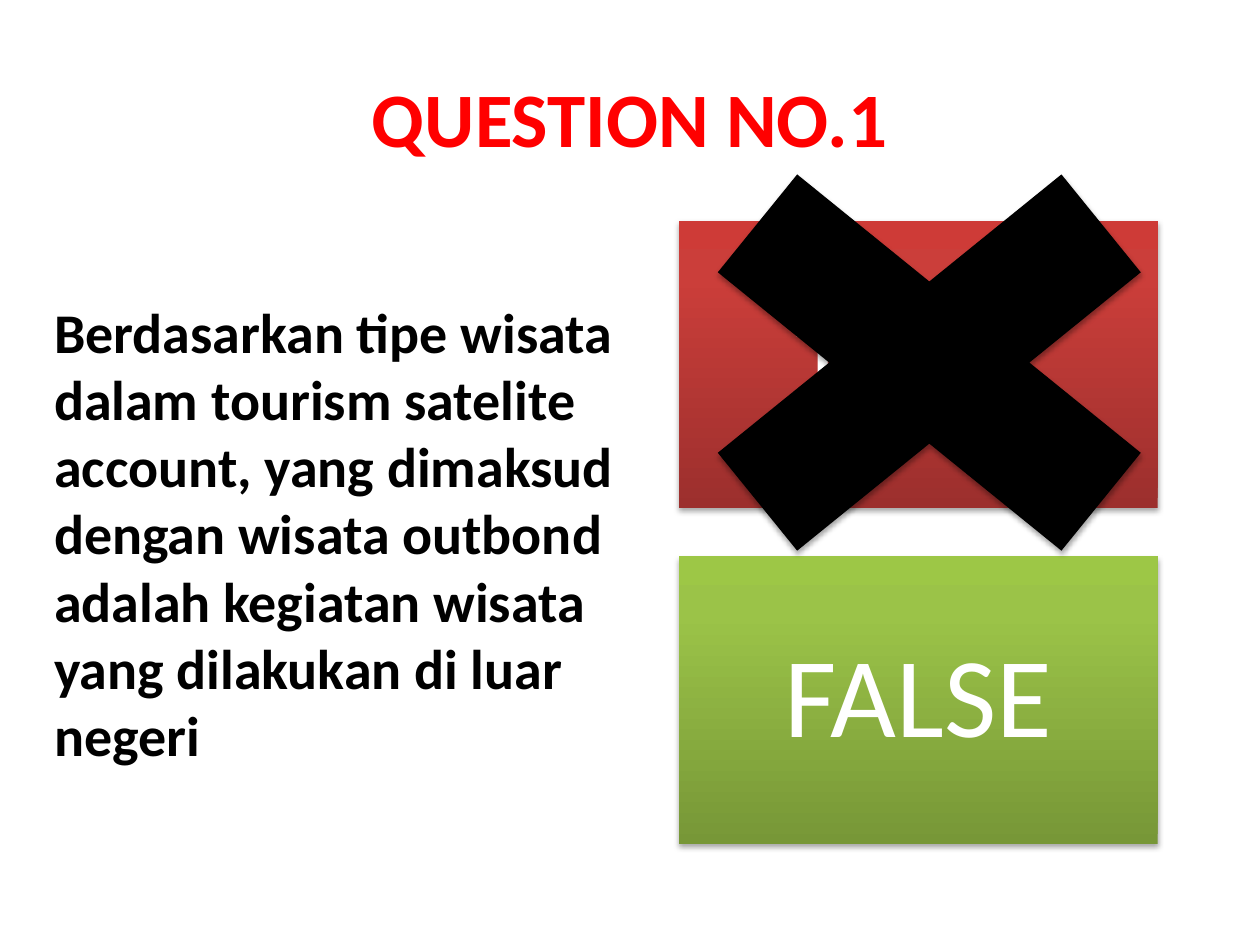
from lxml import etree
from pptx import Presentation
from pptx.dml.color import RGBColor
from pptx.enum.shapes import MSO_SHAPE
from pptx.enum.text import MSO_ANCHOR, PP_ALIGN
from pptx.oxml.ns import qn
from pptx.util import Cm, Pt

RECTANGLE = MSO_SHAPE.RECTANGLE
CROSS = MSO_SHAPE.MATH_MULTIPLY
MIDDLE = MSO_ANCHOR.MIDDLE
LEFT, CENTER = PP_ALIGN.LEFT, PP_ALIGN.CENTER

FONT = "Calibri"
BLACK = RGBColor(0x00, 0x00, 0x00)
WHITE = RGBColor(0xFF, 0xFF, 0xFF)
TITLE_RED = RGBColor(0xFF, 0x00, 0x00)
# Gradient stops run from the bottom of a button to its top
STOP_POSITIONS = (0, 80, 100)
RED_STOPS = (RGBColor(0x9C, 0x2F, 0x2D), RGBColor(0xCB, 0x3E, 0x3A),
             RGBColor(0xCE, 0x3B, 0x37))
GREEN_STOPS = (RGBColor(0x77, 0x97, 0x37), RGBColor(0x9B, 0xC3, 0x48),
               RGBColor(0x9D, 0xC7, 0x46))

QUESTION = ("Berdasarkan tipe wisata dalam tourism satelite account, "
            "yang dimaksud dengan wisata outbond adalah kegiatan wisata "
            "yang dilakukan di luar negeri")


def write_text(text_frame, text, size, color, bold=False, alignment=CENTER):
    text_frame.word_wrap = True
    text_frame.vertical_anchor = MIDDLE
    paragraph = text_frame.paragraphs[0]
    paragraph.alignment = alignment
    run = paragraph.add_run()
    run.text = text
    run.font.name = FONT
    run.font.size = Pt(size)
    run.font.bold = bold
    run.font.color.rgb = color
    return paragraph


def add_color(parent, color):
    return etree.SubElement(parent, qn("a:srgbClr"), val=str(color))


def add_shadow(shape):
    """Give the shape a soft black shadow that falls straight down."""
    shape.shadow.inherit = False
    effects = shape._element.spPr.find(qn("a:effectLst"))
    shadow = etree.SubElement(
        effects, qn("a:outerShdw"), blurRad=str(Pt(3.1)), dist=str(Pt(1.8)),
        dir="5400000", rotWithShape="0")
    etree.SubElement(add_color(shadow, BLACK), qn("a:alpha"), val="35000")


def fill_gradient(shape, colors):
    shape.fill.gradient()
    shape.fill.gradient_angle = 90
    stops = shape._element.spPr.find(qn("a:gradFill")).find(qn("a:gsLst"))
    for stop in list(stops):
        stops.remove(stop)
    for position, color in zip(STOP_POSITIONS, colors):
        stop = etree.SubElement(stops, qn("a:gs"), pos=str(position * 1000))
        add_color(stop, color)


def place_title(slide, left, top, width, height):
    title = slide.shapes.title
    title.left, title.top, title.width, title.height = left, top, width, height
    write_text(title.text_frame, "QUESTION NO.1", 44, TITLE_RED, bold=True)


def add_question(slide, left, top, width, height):
    box = slide.shapes.add_textbox(left, top, width, height)
    paragraph = write_text(box.text_frame, QUESTION, 32, BLACK, bold=True,
                           alignment=LEFT)
    paragraph.space_before = Pt(6.4)


def add_answer(slide, text, colors, left, top, width, height):
    button = slide.shapes.add_shape(RECTANGLE, left, top, width, height)
    fill_gradient(button, colors)
    button.line.fill.background()
    add_shadow(button)
    frame = button.text_frame
    frame.margin_left = frame.margin_right = Cm(0.69)
    frame.margin_top = frame.margin_bottom = Cm(0.69)
    write_text(frame, text, 65, WHITE).line_spacing = 0.9


def add_answers(slide, left, top, width, height):
    """Stack the two answers with a gap of a thirteenth of the height."""
    gap = height // 13
    answer_height = (height - gap) // 2
    answers = (("TRUE", RED_STOPS), ("FALSE", GREEN_STOPS))
    for index, (text, colors) in enumerate(answers):
        add_answer(slide, text, colors, left,
                   top + index * (answer_height + gap), width, answer_height)


def add_cross(slide, left, top, width, height):
    cross = slide.shapes.add_shape(CROSS, left, top, width, height)
    cross.fill.solid()
    cross.fill.fore_color.rgb = BLACK
    cross.line.fill.background()
    add_shadow(cross)


def main():
    presentation = Presentation()
    presentation.slide_width, presentation.slide_height = Cm(25.4), Cm(19.05)
    slide = presentation.slides.add_slide(presentation.slide_layouts[5])
    place_title(slide, Cm(1.27), Cm(0.76), Cm(22.86), Cm(3.18))
    add_question(slide, Cm(0.84), Cm(4.45), Cm(12.27), Cm(12.57))
    add_answers(slide, Cm(13.69), Cm(4.45), Cm(9.65), Cm(12.57))
    add_cross(slide, Cm(12.07), Cm(1.91), Cm(13.33), Cm(10.8))
    presentation.save("out.pptx")


if __name__ == "__main__":
    main()
